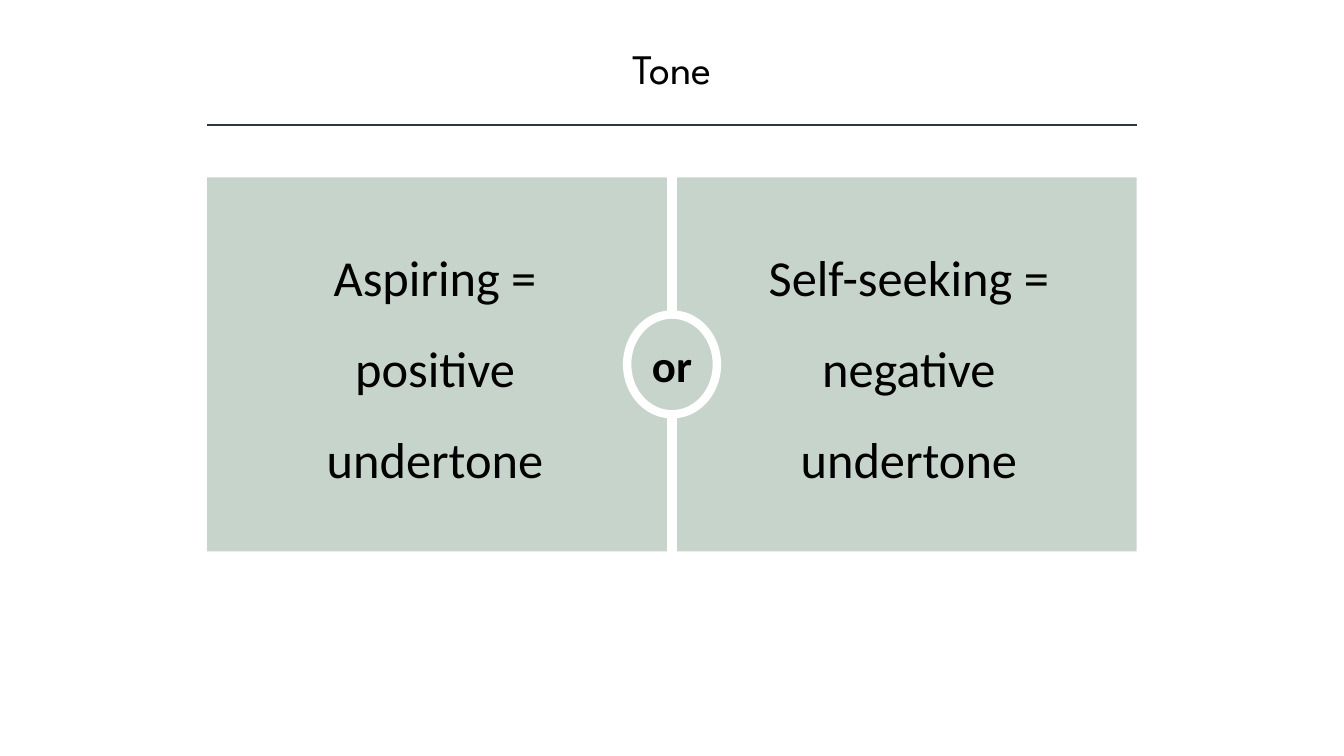
import pptx
import pptx.dml.color
import pptx.enum.shapes
import pptx.enum.text
import pptx.oxml.ns
import pptx.util
from lxml import etree

Inches = pptx.util.Inches
Pt = pptx.util.Pt
SHAPES = pptx.enum.shapes.MSO_SHAPE
ANCHOR = pptx.enum.text.MSO_ANCHOR

COLOURS = {"text": "000000", "rule": "323542", "panel": "C7D4CB", "ring": "FFFFFF"}
SLIDE_WIDTH, SLIDE_HEIGHT = 13.33, 7.5
CENTRE = SLIDE_WIDTH / 2


def rgb(name):
    return pptx.dml.color.RGBColor.from_string(COLOURS[name])


def write(shape, text, size, font="Calibri", bold=False, spacing=1.0,
          anchor=ANCHOR.MIDDLE, side_inset=0.1):
    frame = shape.text_frame
    frame.text = text
    frame.word_wrap = True
    frame.auto_size = pptx.enum.text.MSO_AUTO_SIZE.NONE
    frame.vertical_anchor = anchor
    frame.margin_left = frame.margin_right = Inches(side_inset)
    frame.margin_top = frame.margin_bottom = Inches(0.05)
    paragraph = frame.paragraphs[0]
    paragraph.alignment = pptx.enum.text.PP_ALIGN.CENTER
    paragraph.line_spacing = spacing
    run_font = paragraph.runs[0].font
    run_font.name, run_font.size, run_font.bold = font, Pt(size), bold
    run_font.color.rgb = rgb("text")


presentation = pptx.Presentation()
presentation.slide_width = Inches(SLIDE_WIDTH)
presentation.slide_height = Inches(SLIDE_HEIGHT)
slide = presentation.slides.add_slide(presentation.slide_layouts[5])

# Heading
heading = slide.shapes.title
heading.left, heading.top = Inches(CENTRE - 5), Inches(0.37)
heading.width, heading.height = Inches(10), Inches(0.61)
write(heading, "Tone", size=30, font="League Spartan", anchor=ANCHOR.TOP)

# Two columns, mirrored about the centre of the slide
PANEL_WIDTH, PANEL_HEIGHT, PANEL_TOP, GAP = 4.56, 3.71, 1.76, 0.1
LEFT_EDGE = CENTRE - GAP / 2 - PANEL_WIDTH
RIGHT_EDGE = CENTRE + GAP / 2 + PANEL_WIDTH
MEANING_WIDTH, MEANING_HEIGHT, MEANING_TOP = 3.63, 2.73, 2.13
MEANING_OFFSET = 2.35

# Rule under the heading
rule = slide.shapes.add_connector(
    pptx.enum.shapes.MSO_CONNECTOR.STRAIGHT,
    Inches(LEFT_EDGE), Inches(1.24), Inches(RIGHT_EDGE), Inches(1.24))
rule.line.color.rgb = rgb("rule")
rule.line.width = Pt(1)
etree.SubElement(rule._element.spPr, pptx.oxml.ns.qn("a:effectLst"))

# Panels and the meanings on them
columns = [
    (LEFT_EDGE, CENTRE - MEANING_OFFSET, "Aspiring = positive undertone"),
    (CENTRE + GAP / 2, CENTRE + MEANING_OFFSET, "Self-seeking = negative undertone"),
]
for panel_left, meaning_centre, wording in columns:
    panel = slide.shapes.add_shape(
        SHAPES.RECTANGLE, Inches(panel_left), Inches(PANEL_TOP),
        Inches(PANEL_WIDTH), Inches(PANEL_HEIGHT))
    meaning = slide.shapes.add_shape(
        SHAPES.RECTANGLE, Inches(meaning_centre - MEANING_WIDTH / 2),
        Inches(MEANING_TOP), Inches(MEANING_WIDTH), Inches(MEANING_HEIGHT))
    for block in (panel, meaning):
        block.shadow.inherit = False
        block.fill.solid()
        block.fill.fore_color.rgb = rgb("panel")
        block.line.fill.background()
    write(meaning, wording, size=36, spacing=1.5)

# Ring between the panels
RING_WIDTH, RING_HEIGHT = 0.89, 0.99
ring = slide.shapes.add_shape(
    SHAPES.OVAL, Inches(CENTRE - RING_WIDTH / 2),
    Inches(PANEL_TOP + (PANEL_HEIGHT - RING_HEIGHT) / 2),
    Inches(RING_WIDTH), Inches(RING_HEIGHT))
ring.shadow.inherit = False
ring.fill.solid()
ring.fill.fore_color.rgb = rgb("panel")
ring.line.color.rgb = rgb("ring")
ring.line.width = Pt(6)
write(ring, "or", size=32, bold=True, side_inset=0)

presentation.save("out.pptx")
